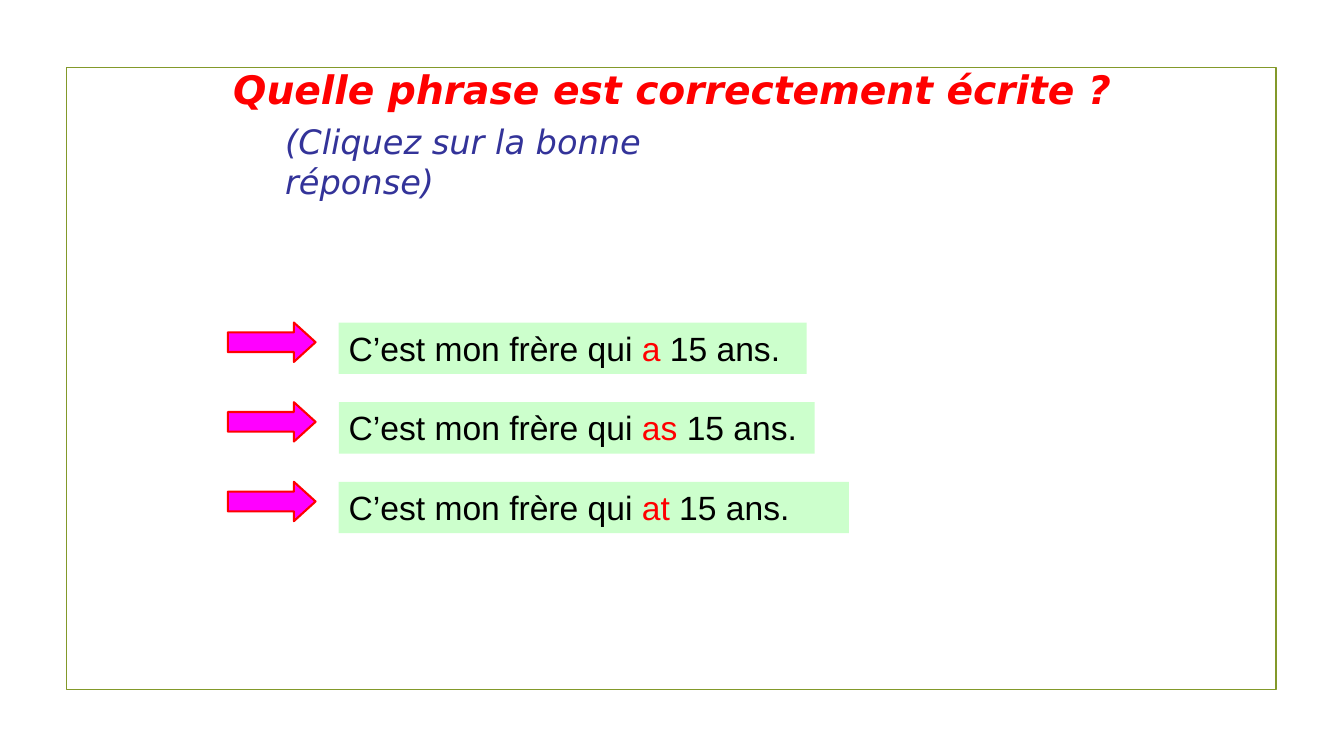
import dataclasses

import pptx
import pptx.dml.color
import pptx.enum.shapes
import pptx.enum.text
import pptx.shapes.autoshape
import pptx.slide
import pptx.text.text
import pptx.util

Inches = pptx.util.Inches
Color = pptx.dml.color.RGBColor
Kind = pptx.enum.shapes.MSO_SHAPE
Align = pptx.enum.text.PP_ALIGN

RED = Color(0xFF, 0x00, 0x00)
BLUE = Color(0x33, 0x33, 0x99)
BLACK = Color(0x00, 0x00, 0x00)
OLIVE = Color(0x83, 0x99, 0x2A)
MINT = Color(0xCC, 0xFF, 0xCC)
PINK = Color(0xFF, 0x00, 0xFF)

SANS = "DejaVu Sans"
TOP = 3.2
STEP = 0.79


@dataclasses.dataclass(frozen=True)
class Answer:
    verb: str
    width: float


ANSWERS = (Answer("a", 4.64), Answer("as", 4.72), Answer("at", 5.06))


def add_run(para: pptx.text.text._Paragraph, text: str, size: float,
            face: str, color: Color, bold: bool = False,
            slant: bool = False) -> None:
    run = para.add_run()
    run.text = text
    font = run.font
    font.size = pptx.util.Pt(size)
    font.name = face
    font.color.rgb = color
    font.bold = bold
    font.italic = slant


def set_frame(frame: pptx.text.text.TextFrame,
              align: Align) -> pptx.text.text._Paragraph:
    """Wrap the text from the top and return its first paragraph."""
    frame.auto_size = pptx.enum.text.MSO_AUTO_SIZE.NONE
    frame.word_wrap = True
    frame.vertical_anchor = pptx.enum.text.MSO_ANCHOR.TOP
    para = frame.paragraphs[0]
    para.alignment = align
    return para


def add_box(slide: pptx.slide.Slide, kind: Kind, left: float, top: float,
            width: float, height: float, fill: Color | None = None,
            line: Color | None = None,
            weight: float = 1) -> pptx.shapes.autoshape.Shape:
    box = slide.shapes.add_shape(kind, Inches(left), Inches(top),
                                 Inches(width), Inches(height))
    box.shadow.inherit = False
    if fill is None:
        box.fill.background()
    else:
        box.fill.solid()
        box.fill.fore_color.rgb = fill
    if line is None:
        box.line.fill.background()
    else:
        box.line.color.rgb = line
        box.line.width = pptx.util.Pt(weight)
    return box


def add_title(slide: pptx.slide.Slide) -> None:
    title = slide.shapes.title
    title.left, title.top = Inches(1.94), Inches(0.6)
    title.width, title.height = Inches(9.45), Inches(0.57)
    para = set_frame(title.text_frame, Align.CENTER)
    add_run(para, "Quelle phrase est correctement écrite ?", 28, SANS, RED,
            bold=True, slant=True)


def add_hint(slide: pptx.slide.Slide) -> None:
    hint = slide.shapes.add_textbox(Inches(2.73), Inches(1.15),
                                    Inches(4.88), Inches(0.9))
    para = set_frame(hint.text_frame, Align.LEFT)
    add_run(para, "(Cliquez sur la bonne réponse)", 24, SANS, BLUE,
            slant=True)


def add_answer(slide: pptx.slide.Slide, answer: Answer, top: float) -> None:
    arrow = add_box(slide, Kind.RIGHT_ARROW, 2.26, top, 0.87, 0.39,
                    PINK, RED, 1.5)
    arrow.adjustments[0] = 0.5
    arrow.adjustments[1] = 0.55
    box = add_box(slide, Kind.RECTANGLE, 3.36, top, answer.width, 0.51, MINT)
    para = set_frame(box.text_frame, Align.LEFT)
    for text, color in (("C’est mon frère qui ", BLACK),
                        (answer.verb, RED), (" 15 ans.", BLACK)):
        add_run(para, text, 24, "Arial", color)


def main() -> None:
    deck = pptx.Presentation()
    deck.slide_width, deck.slide_height = Inches(13.33), Inches(7.5)
    slide = deck.slides.add_slide(deck.slide_layouts.get_by_name("Title Only"))
    add_box(slide, Kind.RECTANGLE, 0.66, 0.67, 12, 6.17,
            line=OLIVE, weight=1.25)
    add_title(slide)
    add_hint(slide)
    for row, answer in enumerate(ANSWERS):
        add_answer(slide, answer, TOP + row * STEP)
    deck.save("out.pptx")


if __name__ == "__main__":
    main()
